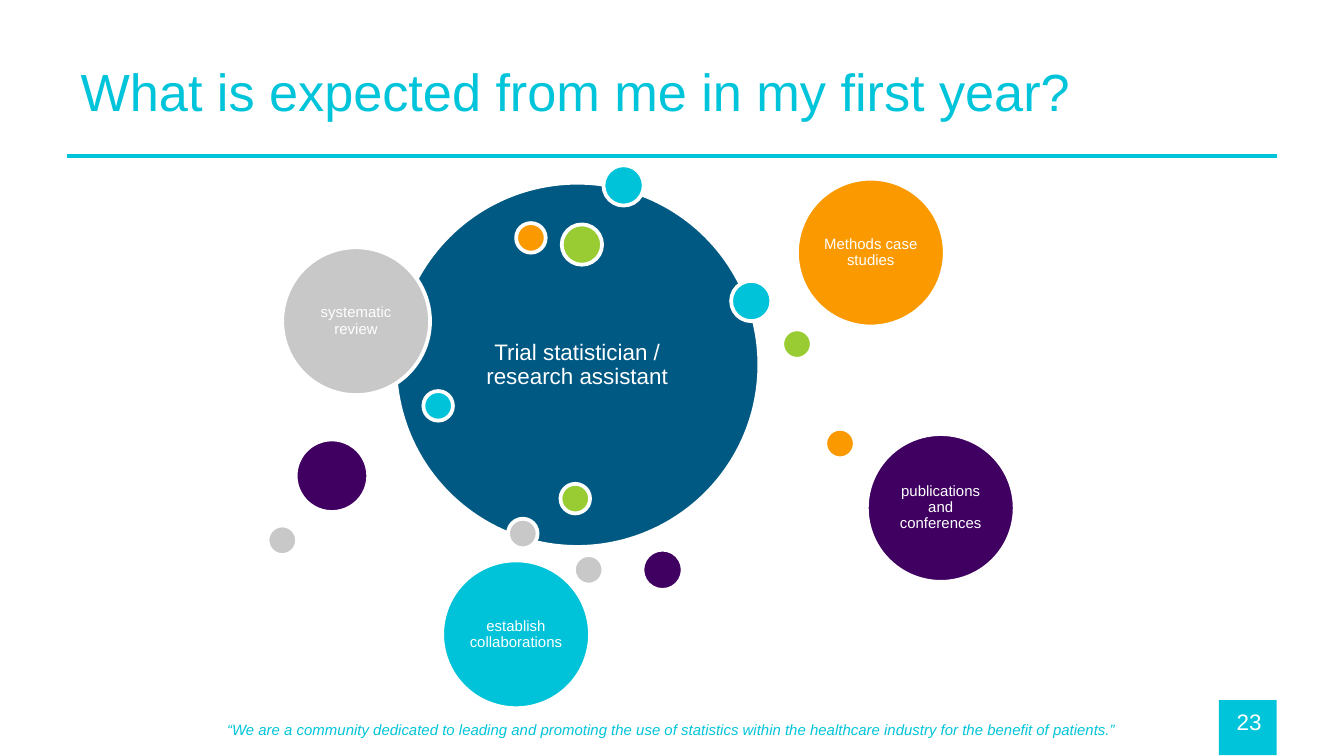
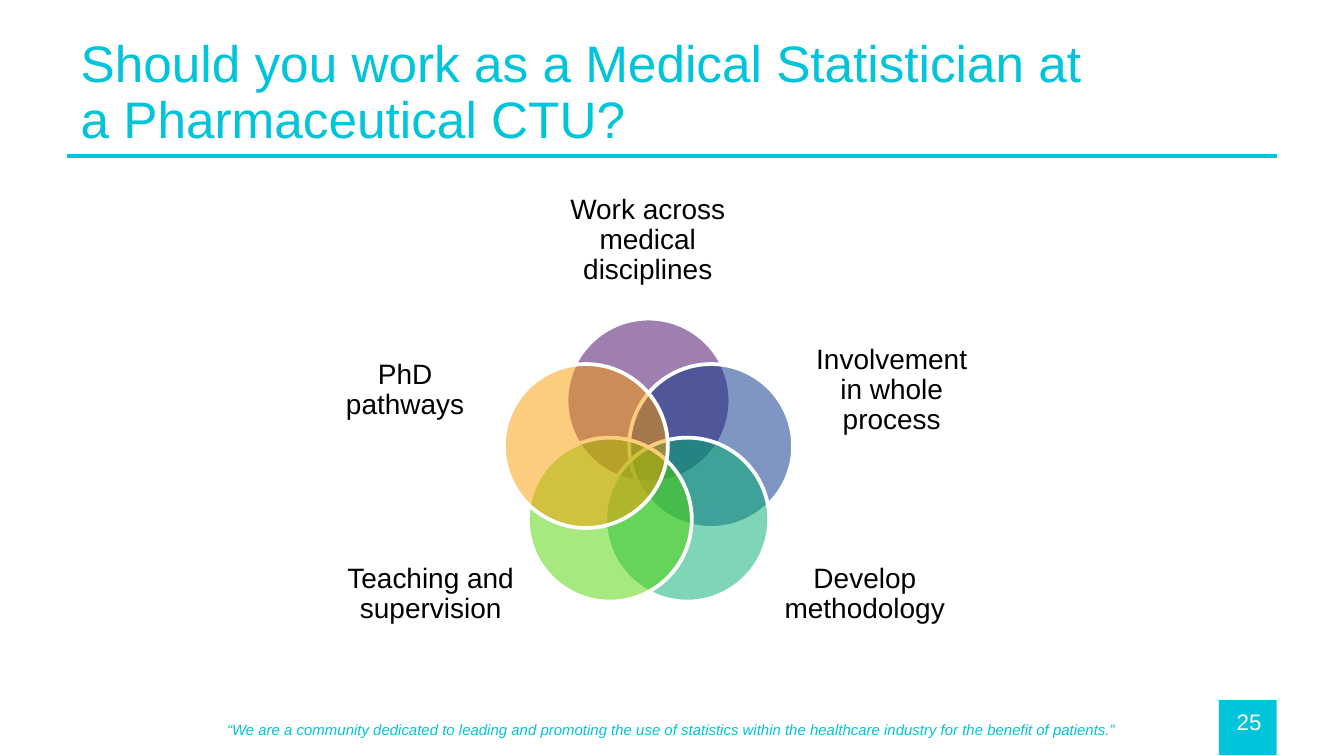
import math
from typing import NamedTuple

from lxml import etree
from pptx import Presentation
from pptx.dml.color import RGBColor
from pptx.enum import shapes, text
from pptx.oxml import ns
from pptx.util import Inches, Pt

COLOURS = {
    "brand": "00C4D9", "white": "FFFFFF", "black": "000000",
    "blue": "005983", "cyan": "00C3D9", "grey": "C8C8C8", "lime": "99CC33",
    "purple": "400061", "orange": "FA9A00",
    "navy": "002F87", "teal": "00AE6F", "green": "4FD400",
}
FONT = "Arial"
TITLE_ONLY = 5
MOTTO = ("“We are a community dedicated to leading and promoting the use of statistics "
         "within the healthcare industry for the benefit of patients.”")
SIZES = {"dot": 0.22, "small": 0.3, "medium": 0.54, "topic": 1.1, "core": 2.71}
BUBBLES = [
    (0.95, 0.13, "core", "blue", "Trial statistician / research assistant"),
    (2.5, 0, "small", "cyan", ""),
    (1.79, 2.63, "dot", "grey", ""),
    (3.83, 1.22, "dot", "lime", ""),
    (2.79, 2.86, "small", "purple", ""),
    (1.85, 0.43, "dot", "orange", ""),
    (1.16, 1.68, "dot", "cyan", ""),
    (0.11, 0.61, "topic", "grey", "systematic review"),
    (2.19, 0.44, "small", "lime", ""),
    (0.21, 2.04, "medium", "purple", ""),
    (3.94, 0.1, "topic", "orange", "Methods case studies"),
    (3.45, 0.86, "small", "cyan", ""),
    (0, 2.68, "dot", "grey", ""),
    (2.18, 2.37, "dot", "lime", ""),
    (4.46, 2, "topic", "purple", "publications and conferences"),
    (4.15, 1.96, "dot", "orange", ""),
    (1.3, 2.94, "topic", "cyan", "establish collaborations"),
    (2.28, 2.9, "dot", "grey", ""),
]
PETALS = [
    ("purple", "Work across medical disciplines", 1.73, 0, 1.42, 0.82),
    ("navy", "Involvement in whole process", 3.62, 1.08, 1.27, 0.89),
    ("teal", "Develop methodology", 3.42, 2.6, 1.27, 0.89),
    ("green", "Teaching and supervision", 0.19, 2.6, 1.27, 0.89),
    ("orange", "PhD pathways", 0, 1.08, 1.27, 0.89),
]


class Box(NamedTuple):
    """A region of the page, in inches."""
    left: float
    top: float
    width: float
    height: float

    def inner(self, left, top, width, height):
        """Return a box placed relative to this one."""
        return Box(self.left + left, self.top + top, width, height)

    def lengths(self):
        """Return the four sides as lengths."""
        return [Inches(side) for side in self]


def colour(name):
    """Look up a named colour."""
    return RGBColor.from_string(COLOURS[name])


def write(shape, words, size, ink, inset=(0.1, 0.05), align=text.PP_ALIGN.CENTER,
          anchor=text.MSO_ANCHOR.MIDDLE, spacing=0.9, italic=False):
    """Put one formatted paragraph in a shape."""
    frame = shape.text_frame
    frame.text = words
    frame.word_wrap = True
    frame.auto_size = text.MSO_AUTO_SIZE.NONE
    frame.vertical_anchor = anchor
    frame.margin_left = frame.margin_right = Inches(inset[0])
    frame.margin_top = frame.margin_bottom = Inches(inset[1])
    paragraph = frame.paragraphs[0]
    paragraph.alignment = align
    paragraph.line_spacing = spacing
    for span in paragraph.runs:
        span.font.name = FONT
        span.font.size = Pt(size)
        span.font.italic = italic
        span.font.color.rgb = colour(ink)


def add_label(page, box, words, size, ink, **style):
    """Add a text box."""
    write(page.shapes.add_textbox(*box.lengths()), words, size, ink, **style)


def add_circle(page, box, fill, opacity=100):
    """Add a white-rimmed circle."""
    circle = page.shapes.add_shape(shapes.MSO_SHAPE.OVAL, *box.lengths())
    circle.shadow.inherit = False
    circle.fill.solid()
    circle.fill.fore_color.rgb = colour(fill)
    circle.line.color.rgb = colour("white")
    circle.line.width = Pt(2)
    if opacity < 100:
        tint = circle._element.spPr.find(ns.qn("a:solidFill"))[0]
        etree.SubElement(tint, ns.qn("a:alpha"), val=str(opacity * 1000))
    return circle


def add_page(deck, title, number, title_width, title_size):
    """Add a page with its title, rule, motto and page number."""
    page = deck.slides.add_slide(deck.slide_layouts[TITLE_ONLY])
    tab = page.shapes.add_shape(shapes.MSO_SHAPE.RECTANGLE,
                                *Box(9.07, 5.21, 0.43, 0.41).lengths())
    tab.shadow.inherit = False
    tab.fill.solid()
    tab.fill.fore_color.rgb = colour("brand")
    tab.line.fill.background()

    rule = page.shapes.add_connector(shapes.MSO_CONNECTOR.STRAIGHT, Inches(9.5), Inches(1.16),
                                     Inches(0.5), Inches(1.16))
    rule.line.color.rgb = colour("brand")
    rule.line.width = Pt(2)
    etree.SubElement(rule._element.spPr, ns.qn("a:effectLst"))

    add_label(page, Box(0.5, 5.31, 9, 0.24), MOTTO, 8, "brand",
              anchor=text.MSO_ANCHOR.TOP, spacing=1.0, italic=True)
    add_label(page, Box(9.08, 5.22, 0.43, 0.3), str(number), 12, "white", spacing=1.0)

    heading = page.shapes.title
    heading.left, heading.top, heading.width, heading.height = Box(
        0.5, 0.23, title_width, 0.94).lengths()
    write(heading, title, title_size, "brand", align=text.PP_ALIGN.LEFT)
    return page


def draw_bubbles(page, box):
    """Draw the cluster of role and topic bubbles."""
    for left, top, kind, fill, words in BUBBLES:
        size = SIZES[kind]
        bubble = add_circle(page, box.inner(left, top, size, size), fill)
        if words:
            points, inset = (12, 0.05) if kind == "core" else (8, 0.03)
            write(bubble, words, points, "white", inset=(inset, inset))


def draw_venn(page, box):
    """Draw overlapping circles around a centre, each with its label."""
    size, orbit = 1.22, 0.49
    centre_x, centre_y = box.width / 2, 2.09
    for index, (fill, words, *place) in enumerate(PETALS):
        angle = math.tau * index / len(PETALS)
        left = centre_x + orbit * math.sin(angle) - size / 2
        top = centre_y - orbit * math.cos(angle) - size / 2
        add_circle(page, box.inner(left, top, size, size), fill, opacity=50)
        add_label(page, box.inner(*place), words, 15, "black", inset=(0, 0))


def main():
    """Build and save the deck."""
    deck = Presentation()
    deck.slide_width = Inches(10)
    deck.slide_height = Inches(10 * 9 / 16)
    page = add_page(deck, "What is expected from me in my first year?", 23, 8.03, 28)
    draw_bubbles(page, Box(1.99, 1.23, 5.56, 4.04))
    page = add_page(deck, "Should you work as a Medical Statistician at a Pharmaceutical CTU?",
                    25, 7.75, 27.5)
    draw_venn(page, Box(2.38, 1.38, 4.89, 3.49))
    deck.save("out.pptx")


if __name__ == "__main__":
    main()
